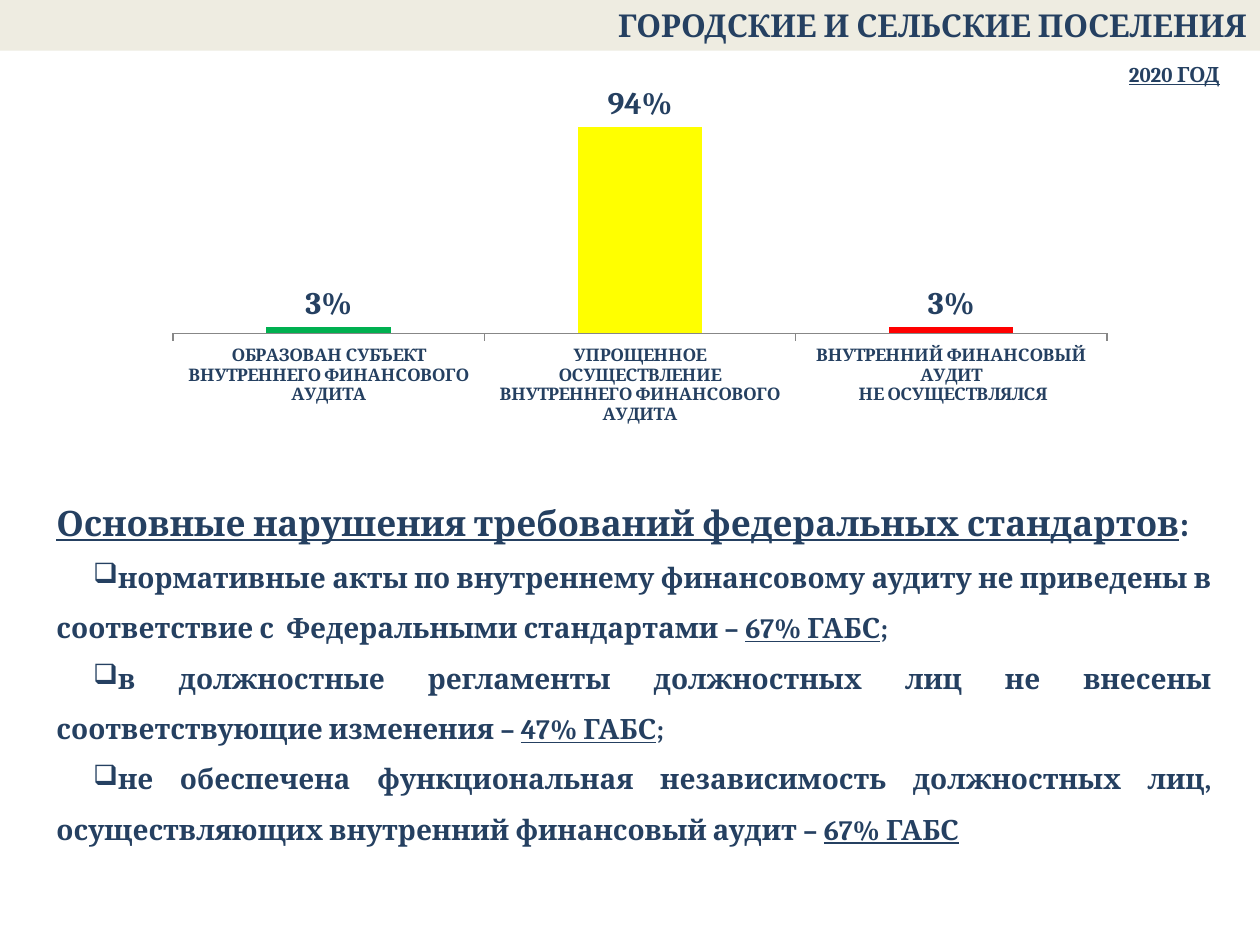
from dataclasses import dataclass

from lxml import etree
from pptx import Presentation
from pptx.chart.data import CategoryChartData
from pptx.dml.color import RGBColor
from pptx.enum import chart as ch, text
from pptx.oxml import parse_xml
from pptx.oxml.ns import nsdecls, qn
from pptx.util import Pt

NAVY, BEIGE, GREY = "254061", "EEECE1", "878787"
FONT = "Cambria"


@dataclass
class Outcome:
    label: str
    share: float
    color: str


@dataclass
class Violation:
    finding: str
    share: str
    end: str = ";"


OUTCOMES = [
    Outcome("ОБРАЗОВАН СУБЪЕКТ ВНУТРЕННЕГО ФИНАНСОВОГО АУДИТА", 0.03, "00B050"),
    Outcome("УПРОЩЕННОЕ ОСУЩЕСТВЛЕНИЕ ВНУТРЕННЕГО ФИНАНСОВОГО АУДИТА", 0.94, "FFFF00"),
    Outcome("ВНУТРЕННИЙ ФИНАНСОВЫЙ АУДИТ\n НЕ ОСУЩЕСТВЛЯЛСЯ", 0.03, "FF0000"),
]
VIOLATIONS = [
    Violation("нормативные акты по внутреннему финансовому аудиту не приведены в "
              "соответствие с  Федеральными стандартами – ", "67% ГАБС"),
    Violation("в должностные регламенты должностных лиц не внесены "
              "соответствующие изменения – ", "47% ГАБС"),
    Violation("не обеспечена функциональная независимость должностных лиц, "
              "осуществляющих внутренний финансовый аудит – ", "67% ГАБС", ""),
]


def rgb(value: str) -> RGBColor:
    return RGBColor.from_string(value)


def set_attrs(obj, values: dict) -> None:
    for name, value in values.items():
        setattr(obj, name, value)


def style_font(font, size: float, underline: bool = False) -> None:
    set_attrs(font, {"name": FONT, "size": Pt(size), "bold": True, "underline": underline})
    font.color.rgb = rgb(NAVY)


def add_run(p, words: str, size: float, underline: bool = False) -> None:
    r = p.add_run()
    r.text = words
    style_font(r.font, size, underline)


def add_text_box(slide, left: float, top: float, width: float, height: float):
    tf = slide.shapes.add_textbox(Pt(left), Pt(top), Pt(width), Pt(height)).text_frame
    tf.word_wrap = True
    return tf


def set_plot_area(chart, **fractions: float) -> None:
    """Fix the inner plot area as fractions of the chart frame."""
    plot_area = chart._chartSpace.chart.plotArea
    for old in plot_area.findall(qn("c:layout")):
        plot_area.remove(old)
    sizes = "".join(f'<c:{k} val="{v}"/>' for k, v in fractions.items())
    plot_area.insert(0, parse_xml(
        f'<c:layout {nsdecls("c")}><c:manualLayout><c:layoutTarget val="inner"/>'
        f'<c:xMode val="edge"/><c:yMode val="edge"/>{sizes}</c:manualLayout></c:layout>'))


def add_outcome_chart(slide, outcomes: list[Outcome]) -> None:
    data = CategoryChartData(number_format="0%")
    data.categories = [o.label for o in outcomes]
    data.add_series("Series 1", [o.share for o in outcomes])
    chart = slide.shapes.add_chart(ch.XL_CHART_TYPE.COLUMN_CLUSTERED, Pt(87.84), Pt(48.96),
                                   Pt(555.84), Pt(193.68), data).chart
    set_attrs(chart, {"has_legend": False, "has_title": False})
    set_attrs(chart.font, {"name": "Calibri", "size": Pt(10)})
    set_plot_area(chart, x=0.02, y=0.08, w=0.96, h=0.65)

    # Axes
    set_attrs(chart.value_axis, {"visible": False, "has_major_gridlines": False,
                                 "minimum_scale": 0, "maximum_scale": 1})
    axis = chart.category_axis
    axis.major_tick_mark = ch.XL_TICK_MARK.OUTSIDE
    axis.format.line.color.rgb = rgb(GREY)
    style_font(axis.tick_labels.font, 10)

    # Columns and labels
    plot = chart.plots[0]
    set_attrs(plot, {"gap_width": 150, "vary_by_categories": False, "has_data_labels": True})
    set_attrs(plot.data_labels, {"show_value": True, "number_format": "0%",
                                 "number_format_is_linked": False,
                                 "position": ch.XL_LABEL_POSITION.OUTSIDE_END})
    style_font(plot.data_labels.font, 18)
    for i, outcome in enumerate(outcomes):
        fill = plot.series[0].points[i].format.fill
        fill.solid()
        fill.fore_color.rgb = rgb(outcome.color)


def add_violation(tf, item: Violation) -> None:
    p = tf.add_paragraph()
    set_attrs(p, {"alignment": text.PP_ALIGN.JUSTIFY, "line_spacing": 1.5})
    add_run(p, item.finding, 16)
    add_run(p, item.share, 16, True)
    if item.end:
        add_run(p, item.end, 16)
    pPr = p._p.get_or_add_pPr()
    pPr.set("marL", "0")
    pPr.set("indent", str(Pt(21)))
    etree.SubElement(pPr, qn("a:buChar")).set("char", "❑")


def main() -> None:
    prs = Presentation()
    set_attrs(prs, {"slide_width": Pt(720), "slide_height": Pt(540)})
    slide = prs.slides.add_slide(prs.slide_layouts[5])

    # Title band
    title = slide.shapes.title
    set_attrs(title, {"left": Pt(0), "top": Pt(0), "width": Pt(720), "height": Pt(29)})
    title.fill.solid()
    title.fill.fore_color.rgb = rgb(BEIGE)
    set_attrs(title.text_frame, {"auto_size": text.MSO_AUTO_SIZE.NONE, "word_wrap": True})
    p = title.text_frame.paragraphs[0]
    p.alignment = text.PP_ALIGN.RIGHT
    add_run(p, "ГОРОДСКИЕ И СЕЛЬСКИЕ ПОСЕЛЕНИЯ", 18)

    add_outcome_chart(slide, OUTCOMES)

    # Violations of the standards
    tf = add_text_box(slide, 25.2, 270, 674.64, 218)
    tf.vertical_anchor = text.MSO_ANCHOR.MIDDLE
    p = tf.paragraphs[0]
    set_attrs(p, {"alignment": text.PP_ALIGN.JUSTIFY, "line_spacing": 1.5})
    add_run(p, "Основные нарушения требований федеральных стандартов", 20, True)
    add_run(p, ":", 20)
    for item in VIOLATIONS:
        add_violation(tf, item)

    # Year
    tf = add_text_box(slide, 638, 31.7, 73.4, 21.6)
    add_run(tf.paragraphs[0], "2020 ГОД", 12, True)

    prs.save("out.pptx")


if __name__ == "__main__":
    main()
